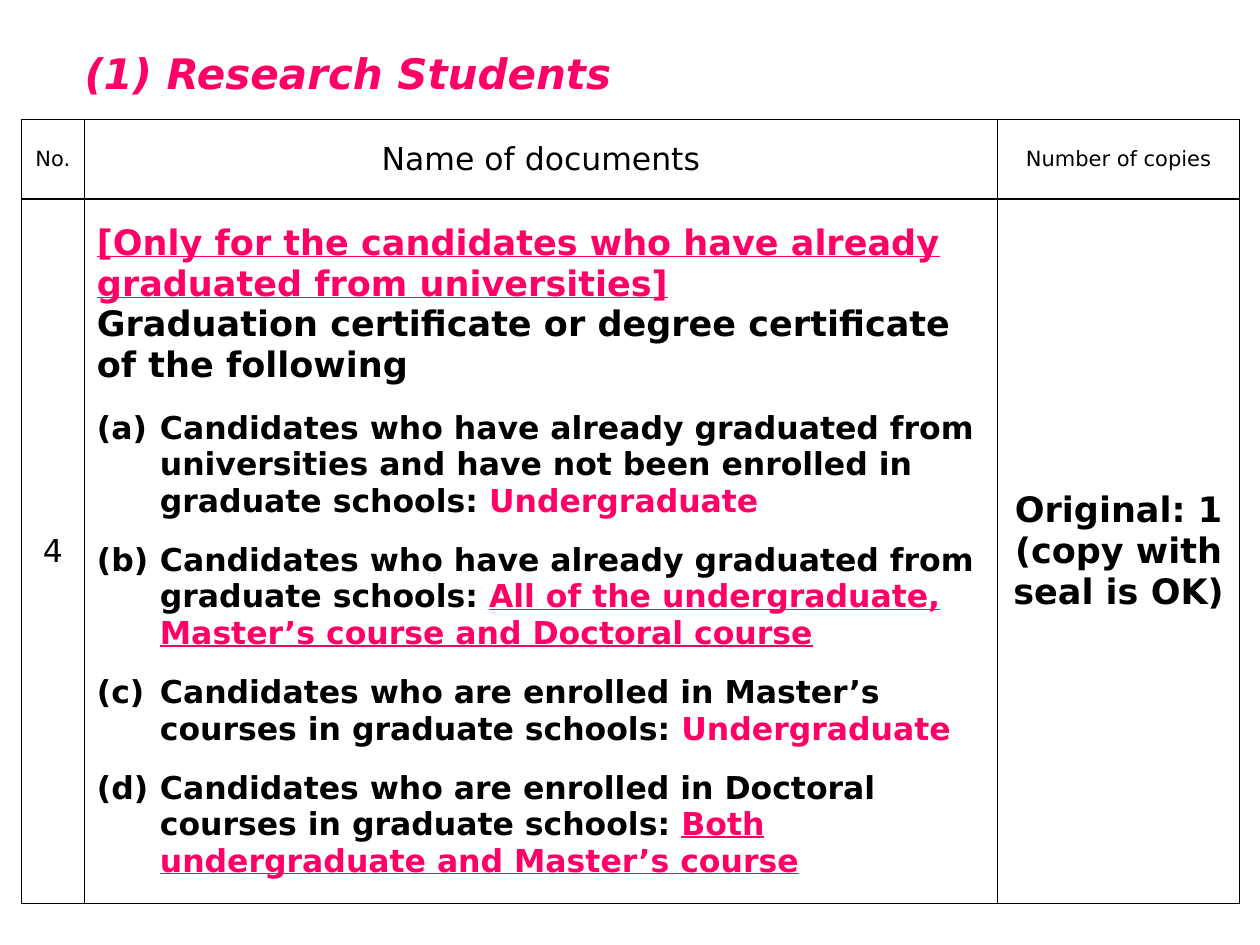
from lxml import etree
from pptx import Presentation
from pptx.dml.color import RGBColor
from pptx.enum.text import MSO_ANCHOR, PP_ALIGN
from pptx.oxml import parse_xml
from pptx.oxml.ns import nsdecls, qn
from pptx.util import Cm, Pt

MIDDLE = MSO_ANCHOR.MIDDLE
LEFT, CENTER = PP_ALIGN.LEFT, PP_ALIGN.CENTER
FONT, BLACK, PINK = "DejaVu Sans", "000000", "FF0066"
TITLE_ONLY = 5


def color(value):
    return RGBColor.from_string(value)


def add_span(para, text, size, shade=BLACK, **formats):
    span = para.add_run()
    span.text = text
    span.font.color.rgb = color(shade)
    values = {"name": FONT, "size": Pt(size), "bold": False, **formats}
    for name, value in values.items():
        setattr(span.font, name, value)


deck = Presentation()
deck.slide_width, deck.slide_height = Cm(25.4), Cm(19.05)
page = deck.slides.add_slide(deck.slide_layouts[TITLE_ONLY])

# Title
title = page.shapes.title
title.left, title.top, title.width, title.height = Cm(1.45), Cm(0.84), Cm(22.23), Cm(1.27)
title.text_frame.vertical_anchor = MIDDLE
title_para = title.text_frame.paragraphs[0]
title_para.alignment = LEFT
add_span(title_para, "(1) Research Students", 24, PINK, bold=True, italic=True)

# Table grid
column_widths = [1.27, 18.41, 4.88]
row_heights = [1.6, 14.2]
table = page.shapes.add_table(
    len(row_heights), len(column_widths), Cm(0.43), Cm(2.41),
    Cm(sum(column_widths)), Cm(sum(row_heights))).table
table.horz_banding = False
table.first_row = False
for column, width in zip(table.columns, column_widths):
    column.width = Cm(width)
for row, height in zip(table.rows, row_heights):
    row.height = Cm(height)

# Cell fill and borders
for cell in table.iter_cells():
    cell.vertical_anchor = MIDDLE
    cell.fill.background()
    properties = cell._tc.get_or_add_tcPr()
    for position, side in enumerate(["lnL", "lnR", "lnT", "lnB"]):
        border = parse_xml(
            f'<a:{side} {nsdecls("a")} w="12700"><a:solidFill>'
            f'<a:srgbClr val="{BLACK}"/></a:solidFill></a:{side}>')
        properties.insert(position, border)

# Centred cells: row, column, lines, size, bold
centred_cells = [
    (0, 0, ["No."], 12, False),
    (0, 1, ["Name of documents"], 18, False),
    (0, 2, ["Number of copies"], 12, False),
    (1, 0, ["4"], 18, False),
    (1, 2, ["Original: 1", "(copy with seal is OK)"], 20, True),
]
for row, column, lines, size, bold in centred_cells:
    frame = table.cell(row, column).text_frame
    for index, line in enumerate(lines):
        para = frame.add_paragraph() if index else frame.paragraphs[0]
        para.alignment = CENTER
        add_span(para, line, size, bold=bold)

# Document description
frame = table.cell(1, 1).text_frame
add_span(frame.paragraphs[0],
         "[Only for the candidates who have already graduated from universities]",
         20, PINK, bold=True, underline=True)
add_span(frame.add_paragraph(),
         "Graduation certificate or degree certificate of the following",
         20, bold=True)

# Lettered list: condition, required certificate, underlined, space before
candidates = [
    ("Candidates who have already graduated from universities and have not been "
     "enrolled in graduate schools: ", "Undergraduate", False, 14),
    ("Candidates who have already graduated from graduate schools: ",
     "All of the undergraduate, Master’s course and Doctoral course", True, 12.8),
    ("Candidates who are enrolled in Master’s courses in graduate schools: ",
     "Undergraduate", False, 12.8),
    ("Candidates who are enrolled in Doctoral courses in graduate schools: ",
     "Both undergraduate and Master’s course", True, 12.8),
]
for condition, certificate, underlined, gap in candidates:
    para = frame.add_paragraph()
    para.space_before = Pt(gap)
    properties = para._p.get_or_add_pPr()
    properties.set("marL", str(Cm(1.27)))
    properties.set("indent", str(-Cm(1.27)))
    etree.SubElement(properties, qn("a:buAutoNum"), type="alphaLcParenBoth")
    add_span(para, condition, 18, bold=True)
    add_span(para, certificate, 18, PINK, bold=True, underline=underlined)

deck.save("out.pptx")
